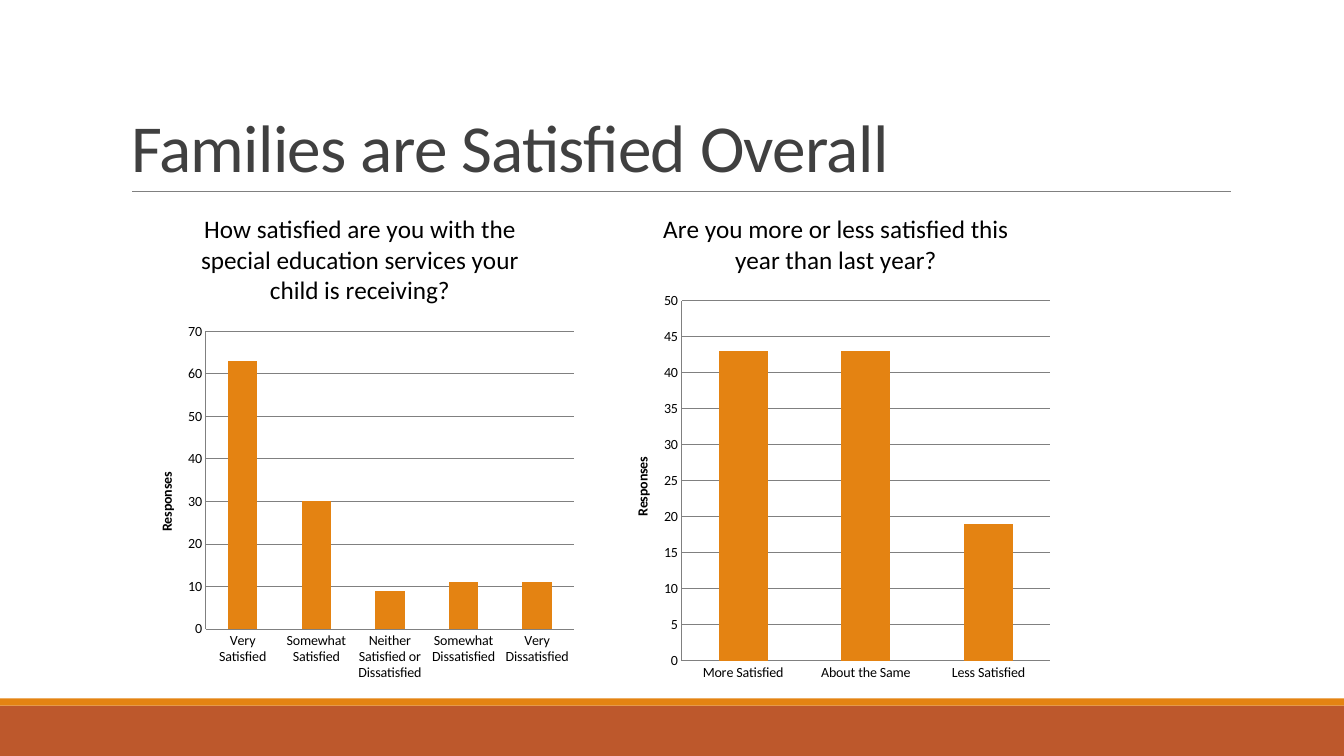
from pptx import Presentation
from pptx.chart.data import CategoryChartData
from pptx.dml.color import RGBColor
from pptx.enum.chart import XL_CHART_TYPE, XL_TICK_MARK
from pptx.enum.shapes import MSO_CONNECTOR, MSO_SHAPE
from pptx.enum.text import MSO_ANCHOR, MSO_AUTO_SIZE, PP_ALIGN
from pptx.oxml.ns import qn
from pptx.util import Inches, Pt
from lxml import etree

COLUMNS = XL_CHART_TYPE.COLUMN_CLUSTERED
NO_TICKS = XL_TICK_MARK.NONE
RECTANGLE = MSO_SHAPE.RECTANGLE
STRAIGHT = MSO_CONNECTOR.STRAIGHT
FONT = "Calibri"
ORANGE, RUST, GREY, DARK, BLACK = "E48312", "BD582C", "808080", "404040", "000000"

HEADLINE = "Families are Satisfied Overall"
VALUE_TITLE = "Responses"
SURVEY = [
    ("How satisfied are you with the special education services your child is receiving?",
     {"Very Satisfied": 63, "Somewhat Satisfied": 30,
      "Neither Satisfied or Dissatisfied": 9,
      "Somewhat Dissatisfied": 11, "Very Dissatisfied": 11}),
    ("Are you more or less satisfied this year than last year?",
     {"More Satisfied": 43, "About the Same": 43, "Less Satisfied": 19}),
]

WIDTH, HEIGHT = 13.33, 7.5
BANDS = [(7, 0.5, RUST), (6.93, 0.07, ORANGE)]  # top, height, colour
RULE_LEFT, RULE_RIGHT, RULE_TOP = 1.31, 12.21, 1.9
CHART_LEFT, CHART_STEP = 1.36, 4.72
CHART_WIDTH, CHART_HEIGHT = 4.42, 4.95


def rgb(colour):
    return RGBColor.from_string(colour)


def style(font, size, colour=BLACK, bold=False):
    font.name, font.size, font.bold = FONT, Pt(size), bold
    font.color.rgb = rgb(colour)


def grey_line(line):
    line.color.rgb = rgb(GREY)
    line.width = Pt(0.75)


def add_survey_chart(slide, left, question, answers):
    data = CategoryChartData()
    data.categories = list(answers)
    data.add_series("Series 1", list(answers.values()))
    chart = slide.shapes.add_chart(
        COLUMNS, Inches(left), Inches(RULE_TOP),
        Inches(CHART_WIDTH), Inches(CHART_HEIGHT), data).chart
    style(chart.font, 10)
    chart.has_legend = False
    chart.has_title = True
    chart.chart_title.include_in_layout = False
    values = chart.value_axis
    values.has_title = True
    for heading, text, size, bold in (
            (chart.chart_title, question, 18, False),
            (values.axis_title, VALUE_TITLE, 10, True)):
        heading.text_frame.text = text
        style(heading.text_frame.paragraphs[0].runs[0].font, size, bold=bold)
    for axis in (chart.category_axis, values):
        axis.major_tick_mark = axis.minor_tick_mark = NO_TICKS
        grey_line(axis.format.line)
    values.has_major_gridlines = True
    grey_line(values.major_gridlines.format.line)
    plot = chart.plots[0]
    plot.gap_width = 150
    plot.vary_by_categories = False
    fill = plot.series[0].format.fill
    fill.solid()
    fill.fore_color.rgb = rgb(ORANGE)


deck = Presentation()
deck.slide_width, deck.slide_height = Inches(WIDTH), Inches(HEIGHT)
slide = deck.slides.add_slide(deck.slide_layouts[5])

for top, height, colour in BANDS:
    band = slide.shapes.add_shape(
        RECTANGLE, 0, Inches(top), Inches(WIDTH), Inches(height))
    band.shadow.inherit = False
    band.fill.solid()
    band.fill.fore_color.rgb = rgb(colour)
    band.line.fill.background()

rule = slide.shapes.add_connector(
    STRAIGHT, Inches(RULE_LEFT), Inches(RULE_TOP), Inches(RULE_RIGHT), Inches(RULE_TOP))
rule.line.color.rgb = rgb(GREY)
rule.line.width = Pt(0.5)
etree.SubElement(rule._element.spPr, qn("a:effectLst"))

title = slide.shapes.title
title.left, title.top = Inches(1.2), Inches(0.31)
title.width, title.height = Inches(11), Inches(1.59)
frame = title.text_frame
frame.text = HEADLINE
frame.word_wrap = True
frame.auto_size = MSO_AUTO_SIZE.NONE
frame.vertical_anchor = MSO_ANCHOR.BOTTOM
headline = frame.paragraphs[0]
headline.alignment = PP_ALIGN.LEFT
headline.line_spacing = 0.85
style(headline.runs[0].font, 48, DARK)
headline.runs[0]._r.get_or_add_rPr().set("spc", "-50")

for column, (question, answers) in enumerate(SURVEY):
    add_survey_chart(slide, CHART_LEFT + column * CHART_STEP, question, answers)

deck.save("out.pptx")
